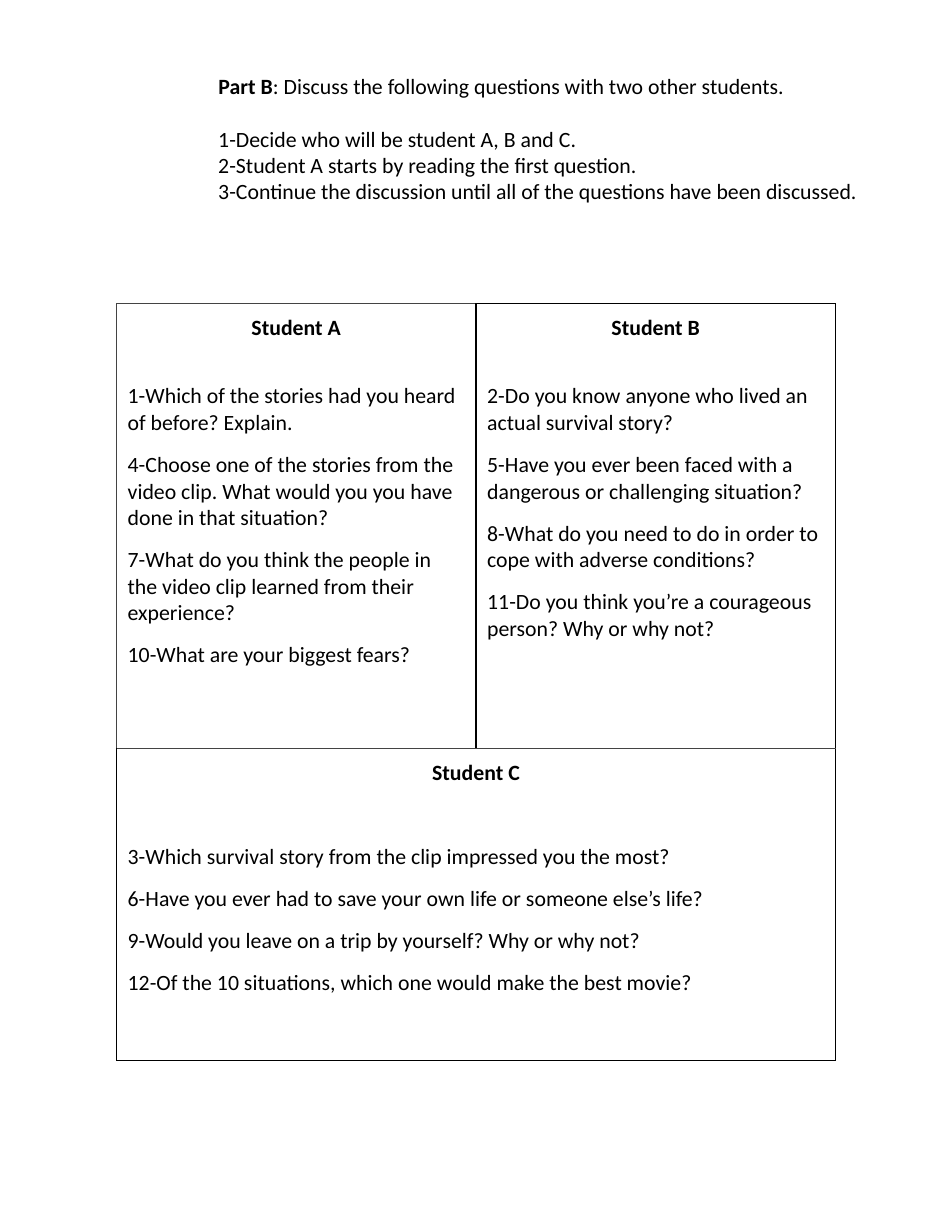
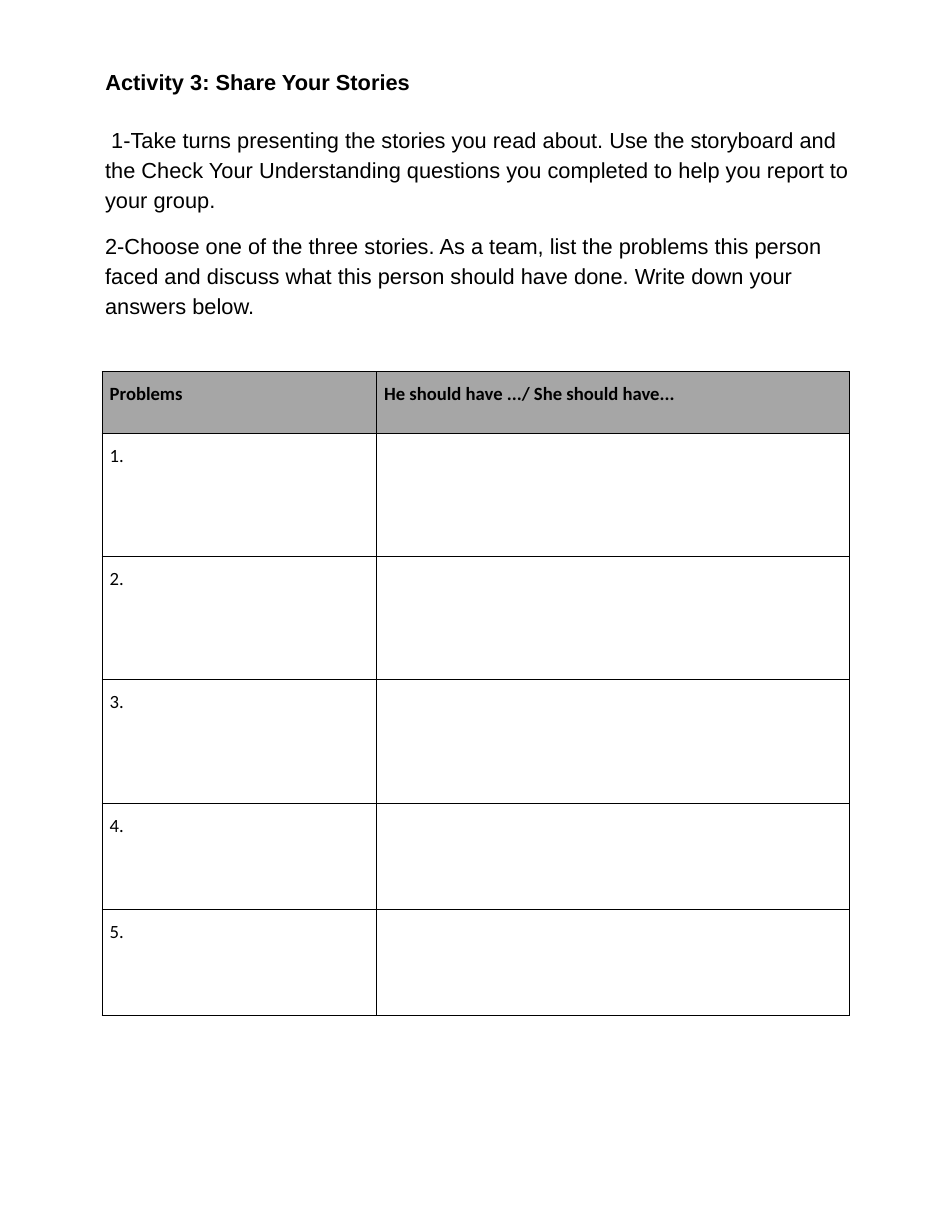
"""Build two discussion worksheets: student question cards and a problem list."""
from dataclasses import dataclass

from lxml.etree import SubElement
from pptx import Presentation
from pptx.dml.color import RGBColor as RGB
from pptx.enum.text import MSO_ANCHOR as Anchor, MSO_AUTO_SIZE as AutoSize, PP_ALIGN as Align
from pptx.oxml.ns import qn
from pptx.util import Inches, Pt


@dataclass(frozen=True)
class Theme:
    """Colours, fonts and type sizes shared by the slides."""
    ink: str = "000000"
    rule: str = "434343"
    header: str = "A6A6A6"
    sans: str = "Calibri"
    heading: str = "Arial"
    body: int = 14
    small: int = 12
    gap: int = 10
    inset: float = 1


T = Theme()
COLS, ROWS = 85, 110
WIDTH, HEIGHT = Inches(8.5), Inches(11)

CARDS = {
    "Student A": [
        "1-Which of the stories had you heard of before? Explain.",
        "4-Choose one of the stories from the video clip. What would you you have done in that situation?",
        "7-What do you think the people in the video clip learned from their experience?",
        "10-What are your biggest fears?",
    ],
    "Student B": [
        "2-Do you know anyone who lived an actual survival story?",
        "5-Have you ever been faced with a dangerous or challenging situation?",
        "8-What do you need to do in order to cope with adverse conditions?",
        "11-Do you think you’re a courageous person? Why or why not?",
    ],
    "Student C": [
        "3-Which survival story from the clip impressed you the most?",
        "6-Have you ever had to save your own life or someone else’s life?",
        "9-Would you leave on a trip by yourself? Why or why not?",
        "12-Of the 10 situations, which one would make the best movie?",
    ],
}


def across(n):
    """Return the width of n grid columns."""
    return int(WIDTH * n / COLS)


def down(n):
    """Return the height of n grid rows."""
    return int(HEIGHT * n / ROWS)


def set_insets(obj, x, y):
    """Set equal side insets and equal top and bottom insets."""
    obj.margin_left = obj.margin_right = across(x)
    obj.margin_top = obj.margin_bottom = down(y)


def add_para(tf, runs, font=T.sans, size=T.body, align=Align.LEFT, before=0, spacing=1.0):
    """Add a paragraph of (text, bold) runs, filling the empty first one."""
    p = tf.paragraphs[0]
    if p.runs:
        p = tf.add_paragraph()
    p.alignment, p.line_spacing = align, spacing
    p.space_before = Pt(before)
    for text, bold in runs:
        r = p.add_run()
        r.text = text
        r.font.name, r.font.size, r.font.bold = font, Pt(size), bold
        r.font.color.rgb = RGB.from_string(T.ink)


def set_frame(sp, col, row, cols, rows):
    """Place a text shape on the grid and return its text frame."""
    sp.left, sp.top, sp.width, sp.height = across(col), down(row), across(cols), down(rows)
    tf = sp.text_frame
    tf.word_wrap, tf.auto_size = True, AutoSize.NONE
    tf.vertical_anchor = Anchor.TOP
    set_insets(tf, T.inset, T.inset)
    return tf


def add_titled_slide(prs, runs, place, font):
    """Add a title-only slide with a small left-aligned title."""
    s = prs.slides.add_slide(prs.slide_layouts[5])
    add_para(set_frame(s.shapes.title, *place), runs, font)
    return s


def add_text(s, place):
    """Add an empty text box on the grid and return its frame."""
    return set_frame(s.shapes.add_textbox(0, 0, 0, 0), *place)


def add_grid(s, col, row, widths, heights):
    """Add a plain table from column widths and row heights."""
    table = s.shapes.add_table(len(heights), len(widths), across(col), down(row),
                               across(sum(widths)), down(sum(heights))).table
    table.first_row = table.horz_banding = False
    for column, n in zip(table.columns, widths):
        column.width = across(n)
    for line, n in zip(table.rows, heights):
        line.height = down(n)
    return table


def style_cell(cell, width, colours, insets, fill=None):
    """Set the insets, fill and borders (left, right, top, bottom) of a cell."""
    set_insets(cell, *insets)
    pr = cell._tc.get_or_add_tcPr()
    for side, colour in zip("LRTB", colours):
        ln = SubElement(pr, qn(f"a:ln{side}"), w=str(Pt(width)))
        SubElement(SubElement(ln, qn("a:solidFill")), qn("a:srgbClr"), val=colour)
    if fill:
        cell.fill.solid()
        cell.fill.fore_color.rgb = RGB.from_string(fill)
    else:
        cell.fill.background()


def fill_card(cell, name, first_gap):
    """Write a student's name and questions in a cell."""
    tf = cell.text_frame
    add_para(tf, [(name, True)], align=Align.CENTER)
    for i, question in enumerate(CARDS[name]):
        add_para(tf, [(question, False)], before=T.gap if i else first_gap)


def add_discussion(prs):
    """Add the group discussion slide."""
    s = add_titled_slide(prs, [("Part B", True),
                               (": Discuss the following questions with two other students.", False)],
                         (18.5, 5.5, 59.2, 4.4), T.sans)
    tf = add_text(s, (18.5, 10.2, 59.2, 9.4))
    for step in ("1-Decide who will be student A, B and C.",
                 "2-Student A starts by reading the first question.",
                 "3-Continue the discussion until all of the questions have been discussed."):
        add_para(tf, [(step, False)])
    table = add_grid(s, 10.4, 27.1, [32.1, 32.1], [39.7, 27.9])
    table.cell(1, 0).merge(table.cell(1, 1))
    borders = [(T.rule, T.ink, T.rule, T.rule), (T.ink,) * 4] + [(T.ink, T.ink, T.rule, T.ink)] * 2
    for cell, colours in zip(table.iter_cells(), borders):
        style_cell(cell, 0.75, colours, (T.inset, T.inset))
    for name, spot, first_gap in (("Student A", (0, 0), 27), ("Student B", (0, 1), 27),
                                  ("Student C", (1, 0), 37)):
        fill_card(table.cell(*spot), name, first_gap)


def add_stories(prs):
    """Add the story sharing slide with its table of problems."""
    s = add_titled_slide(prs, [("Activity 3: Share Your Stories", True)], (8.4, 5.1, 70, 4.4), T.heading)
    tf = add_text(s, (8.4, 10, 70, 18.2))
    steps = (" 1-Take turns presenting the stories you read about. Use the storyboard and the Check Your "
             "Understanding questions you completed to help you report to your group.",
             "2-Choose one of the three stories. As a team, list the problems this person faced and "
             "discuss what this person should have done. Write down your answers below.")
    for i, step in enumerate(steps):
        add_para(tf, [(step, False)], T.heading, before=T.gap * i, spacing=1.15)
    table = add_grid(s, 9.1, 33.2, [24.5, 42.2], [5.5] + [11] * 3 + [9.5] * 2)
    rows = [("Problems", "He should have .../ She should have...")]
    rows += [(f"{n}.", "") for n in range(1, 6)]
    for i, texts in enumerate(rows):
        for j, text in enumerate(texts):
            cell = table.cell(i, j)
            style_cell(cell, 0.5, (T.ink,) * 4, (0.7, 0), None if i else T.header)
            if text:
                add_para(cell.text_frame, [(text, i == 0)], size=T.small, spacing=1.5)


def main():
    """Build and save the presentation."""
    prs = Presentation()
    prs.slide_width, prs.slide_height = WIDTH, HEIGHT
    add_discussion(prs)
    add_stories(prs)
    prs.save("out.pptx")


if __name__ == "__main__":
    main()
